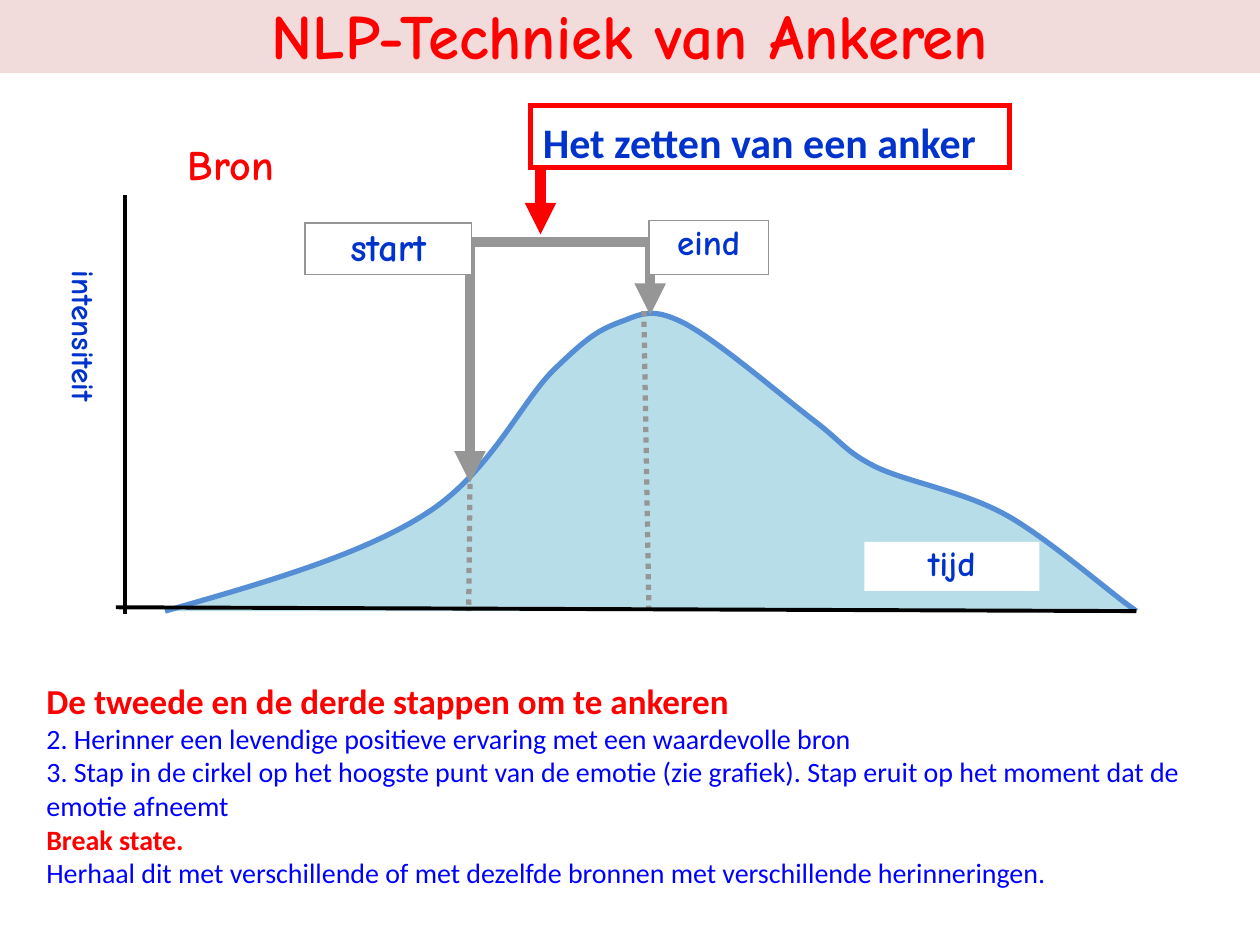
from dataclasses import dataclass

from lxml.etree import SubElement
from pptx import Presentation
from pptx.dml.color import RGBColor
from pptx.enum.dml import MSO_LINE as Dash
from pptx.enum.shapes import MSO_CONNECTOR as Connector, MSO_SHAPE as Shape
from pptx.enum.text import MSO_ANCHOR as Anchor, MSO_AUTO_SIZE as AutoSize, PP_ALIGN as Align
from pptx.oxml.ns import qn
from pptx.util import Inches, Pt


@dataclass(frozen=True)
class Theme:
    heading: str = "Comic Neue"
    body: str = "Calibri"
    red: str = "FF0000"
    navy: str = "0033CC"
    blue: str = "0000FF"
    grey: str = "969696"
    black: str = "000000"
    white: str = "FFFFFF"
    banner: str = "F2DCDB"
    hill: str = "B7DEE8"
    ridge: str = "558ED5"
    title_size: int = 36
    large: int = 24
    start_size: int = 22
    medium: int = 20
    small: int = 18
    note: int = 16
    thick: float = 6
    medium_line: float = 3
    axis: float = 2.25
    thin: float = 0.75


class Diagram:
    """Draws styled elements on the current slide."""

    def __init__(self, slide, theme):
        self.shapes = slide.shapes
        self.theme = theme

    def paint(self, shape, fill=None, line=None, width=0):
        shape.shadow.inherit = False
        if fill:
            shape.fill.solid()
            shape.fill.fore_color.rgb = RGBColor.from_string(fill)
        else:
            shape.fill.background()
        if line:
            shape.line.color.rgb = RGBColor.from_string(line)
            shape.line.width = Pt(width)
            SubElement(shape.line._get_or_add_ln(), qn("a:miter"), lim="800000")
        else:
            shape.line.fill.background()

    def set_font(self, paragraph, size, color, face, bold=True):
        font = paragraph.font
        font.size, font.name, font.bold = Pt(size), face, bold
        font.color.rgb = RGBColor.from_string(color)

    def set_frame(self, frame, insets, anchor=Anchor.TOP):
        frame.word_wrap = True
        frame.vertical_anchor = anchor
        (frame.margin_left, frame.margin_top,
         frame.margin_right, frame.margin_bottom) = map(Inches, insets)

    def label(self, text, box, size, color, fill=None, line=None, width=0, insets=(0, 0, 0, 0),
              face=None, align=Align.CENTER, anchor=Anchor.TOP, vertical=False):
        shape = self.shapes.add_shape(Shape.RECTANGLE, *map(Inches, box))
        self.paint(shape, fill, line, width)
        frame = shape.text_frame
        self.set_frame(frame, insets, anchor)
        if vertical:
            frame._txBody.bodyPr.set("vert", "eaVert")
        paragraph = frame.paragraphs[0]
        paragraph.text, paragraph.alignment = text, align
        self.set_font(paragraph, size, color, face or self.theme.heading)

    def steps(self, box, entries):
        frame = self.shapes.add_textbox(*map(Inches, box)).text_frame
        self.set_frame(frame, (0.1, 0.08, 0.1, 0), Anchor.MIDDLE)
        frame.auto_size = AutoSize.SHAPE_TO_FIT_TEXT
        for index, (text, size, color, bold) in enumerate(entries):
            paragraph = frame.add_paragraph() if index else frame.paragraphs[0]
            paragraph.text = text
            self.set_font(paragraph, size, color, self.theme.body, bold)

    def line(self, start, end, color, width, dash=None, arrow=False):
        connector = self.shapes.add_connector(Connector.STRAIGHT, *map(Inches, start + end))
        connector.line.color.rgb = RGBColor.from_string(color)
        connector.line.width = Pt(width)
        if dash:
            connector.line.dash_style = dash
        if arrow:
            SubElement(connector.line._get_or_add_ln(), qn("a:tailEnd"), type="triangle")
        SubElement(connector._element.spPr, qn("a:effectLst"))

    def curve(self, knots, fill, line, width):
        start, *rest = [(Inches(x), Inches(y)) for x, y in knots]
        builder = self.shapes.build_freeform(*start)
        builder.add_line_segments(rest, close=False)
        shape = builder.convert_to_shape()
        segments = list(shape._element.iter(qn("a:lnTo")))
        outline = segments[0].getparent()
        for first in range(0, len(segments), 3):
            bend = SubElement(outline, qn("a:cubicBezTo"))
            for segment in segments[first:first + 3]:
                bend.append(segment[0])
                outline.remove(segment)
        self.paint(shape, fill, line, width)


def main():
    deck = Presentation()
    deck.slide_width, deck.slide_height = Inches(10), Inches(7.5)
    theme = Theme()
    diagram = Diagram(deck.slides.add_slide(deck.slide_layouts[6]), theme)

    emotion = [(1.31, 4.85), (2.08, 4.63), (2.85, 4.41), (3.36, 4.09),
               (3.88, 3.77), (4.13, 3.2), (4.39, 2.94),
               (4.65, 2.69), (4.73, 2.63), (4.91, 2.56),
               (5.08, 2.5), (5.16, 2.43), (5.42, 2.56),
               (5.68, 2.69), (6.19, 3.13), (6.45, 3.33),
               (6.7, 3.52), (6.7, 3.58), (6.96, 3.71),
               (7.22, 3.83), (7.65, 3.9), (7.99, 4.09),
               (8.33, 4.28), (8.84, 4.73), (9.02, 4.85)]
    diagram.curve(emotion, theme.hill, theme.ridge, theme.medium_line)

    diagram.steps((0.27, 5.3, 9.73, 1.77), [
        ("De tweede en de derde stappen om te ankeren", theme.medium, theme.red, True),
        ("2. Herinner een levendige positieve ervaring met een waardevolle bron",
         theme.note, theme.blue, False),
        ("3. Stap in de cirkel op het hoogste punt van de emotie (zie grafiek). "
         "Stap eruit op het moment dat de emotie afneemt", theme.note, theme.blue, False),
        ("Break state.", theme.note, theme.red, True),
        ("Herhaal dit met verschillende of met dezelfde bronnen met verschillende herinneringen.",
         theme.note, theme.blue, False),
    ])

    diagram.line((3.73, 1.92), (5.19, 1.92), theme.grey, theme.thick)
    for top, bottom in [((3.73, 3.84), (3.72, 4.85)), ((5.11, 2.47), (5.15, 4.85))]:
        diagram.line(top, bottom, theme.grey, theme.medium_line, dash=Dash.ROUND_DOT)
    for x, tip in [(3.73, 3.83), (5.16, 2.5)]:
        diagram.line((x, 1.94), (x, tip), theme.grey, theme.thick, arrow=True)

    diagram.label("intensiteit", (0.27, 2.15, 0.55, 1.51), theme.small, theme.navy,
                  theme.white, vertical=True)
    for moment, box, size in [("start", (2.42, 1.77, 1.32, 0.41), theme.start_size),
                              ("eind", (5.15, 1.75, 0.95, 0.43), theme.medium)]:
        diagram.label(moment, box, size, theme.navy, theme.white, theme.grey, theme.thin)
    diagram.line((4.29, 1.31), (4.29, 1.86), theme.red, theme.thick, arrow=True)
    diagram.label("tijd", (6.86, 4.3, 1.39, 0.39), theme.medium, theme.navy, theme.white)
    diagram.label("Bron", (1.11, 1.05, 1.45, 0.47), theme.large, theme.red, theme.white,
                  insets=(0.1, 0.05, 0.1, 0.05))

    for start, end in [((0.92, 4.82), (9.02, 4.85)), ((0.99, 1.55), (0.99, 4.87))]:
        diagram.line(start, end, theme.black, theme.axis)

    diagram.label("Het zetten van een anker", (4.21, 0.84, 3.8, 0.49), theme.large, theme.navy,
                  line=theme.red, width=theme.medium_line, insets=(0.1, 0.08, 0.1, 0),
                  face=theme.body, align=Align.LEFT, anchor=Anchor.MIDDLE)
    diagram.label("NLP-Techniek van Ankeren", (0, -0.03, 10, 0.61), theme.title_size, theme.red,
                  theme.banner)

    deck.save("out.pptx")


if __name__ == "__main__":
    main()
